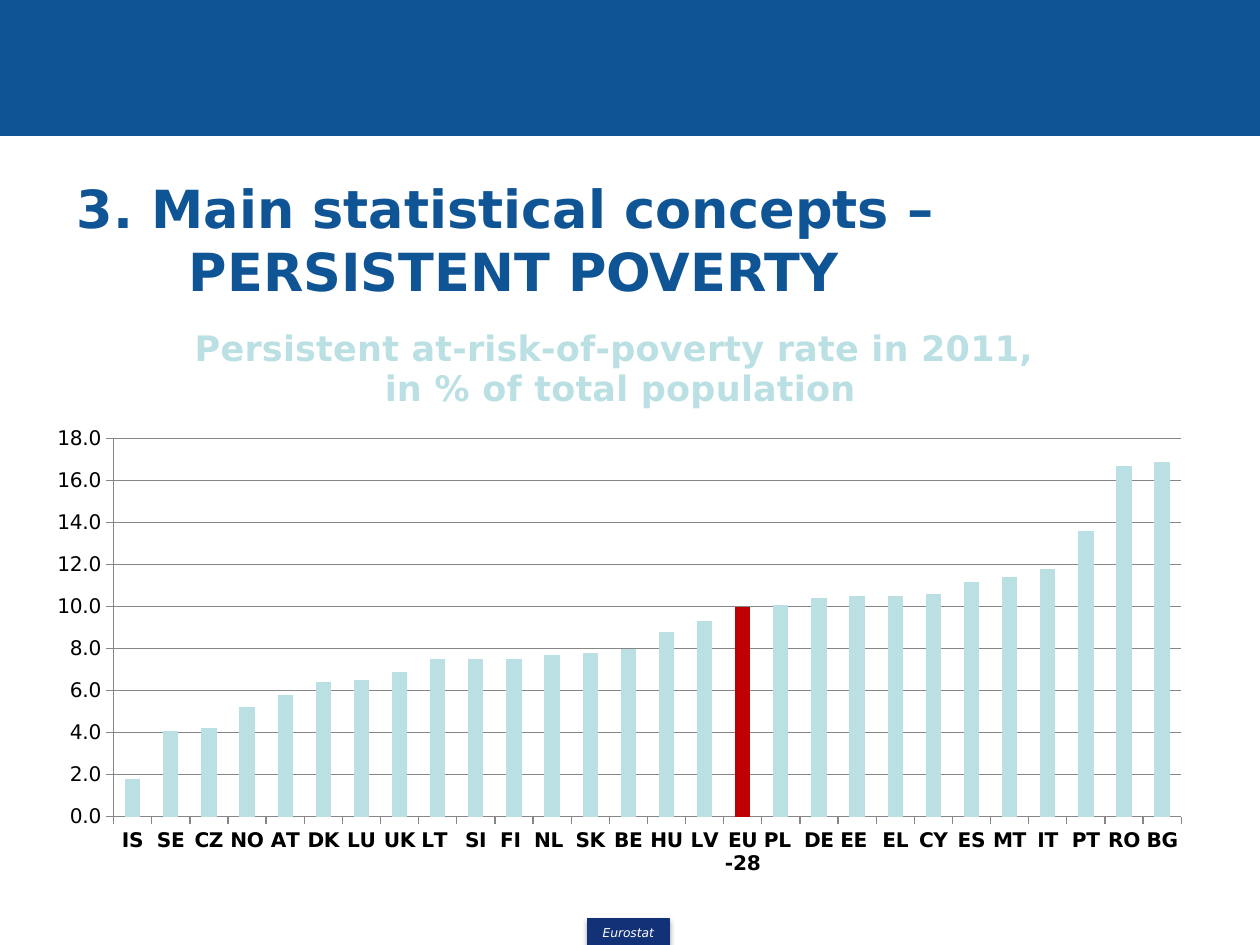
from lxml import etree
from pptx import Presentation
from pptx.chart.data import CategoryChartData
from pptx.dml.color import RGBColor
from pptx.enum.chart import XL_CHART_TYPE, XL_TICK_MARK
from pptx.enum.shapes import MSO_SHAPE
from pptx.enum.text import MSO_ANCHOR, PP_ALIGN
from pptx.oxml import parse_xml
from pptx.oxml.ns import nsdecls, qn
from pptx.util import Cm, Pt

BLUE = RGBColor(0x0F, 0x54, 0x94)
NAVY = RGBColor(0x13, 0x31, 0x76)
PALE = RGBColor(0xBB, 0xE0, 0xE3)
RED = RGBColor(0xC0, 0x00, 0x00)
GREY = RGBColor(0x86, 0x86, 0x86)
BLACK = RGBColor(0x00, 0x00, 0x00)
WHITE = RGBColor(0xFF, 0xFF, 0xFF)
FACE = "DejaVu Sans"


def add_block(left, top, width, height, color):
    block = slide.shapes.add_shape(
        MSO_SHAPE.RECTANGLE, Cm(left), Cm(top), Cm(width), Cm(height))
    block.fill.solid()
    block.fill.fore_color.rgb = color
    block.line.color.rgb = color
    block.line.width = Pt(0.75)
    block.shadow.inherit = False
    return block


def set_font(font, size, color, bold=False, italic=False):
    font.name = FACE
    font.size = Pt(size)
    font.color.rgb = color
    font.bold = bold
    font.italic = italic


deck = Presentation()
deck.slide_width, deck.slide_height = Cm(25.4), Cm(19.05)
slide = deck.slides.add_slide(deck.slide_layouts[6])

# Header band
add_block(0, 0, 25.4, 2.74, BLUE)

# Footer label with a soft shadow
label = add_block(11.84, 18.52, 1.65, 0.56, NAVY)
effects = label._element.spPr.find(qn("a:effectLst"))
effects.append(parse_xml(
    f'<a:outerShdw {nsdecls("a")} blurRad="40000" dist="23000" dir="5400000" rotWithShape="0">'
    '<a:srgbClr val="000000"><a:alpha val="35000"/></a:srgbClr></a:outerShdw>'))
frame = label.text_frame
frame.margin_left = frame.margin_right = 0
frame.margin_top = frame.margin_bottom = 0
frame.vertical_anchor = MSO_ANCHOR.MIDDLE
frame.text = "Eurostat"
frame.paragraphs[0].alignment = PP_ALIGN.CENTER
set_font(frame.paragraphs[0].runs[0].font, 7, WHITE, italic=True)

# Slide title with a hanging indent
box = slide.shapes.add_textbox(Cm(1.3), Cm(3.53), Cm(24.61), Cm(2.59))
frame = box.text_frame
frame.word_wrap = True
frame.vertical_anchor = MSO_ANCHOR.MIDDLE
head = frame.paragraphs[0]
head.text = "3. Main statistical concepts – \v\tPERSISTENT POVERTY"
props = head._p.get_or_add_pPr()
props.set("marL", str(Cm(0.99)))
props.set("indent", str(-Cm(0.99)))
for run in head.runs:
    set_font(run.font, 30, BLUE, bold=True)

# Poverty rates by country
rates = {
    "IS": 1.8, "SE": 4.1, "CZ": 4.2, "NO": 5.2, "AT": 5.8, "DK": 6.4, "LU": 6.5,
    "UK ": 6.9, "LT ": 7.5, "SI": 7.5, "FI ": 7.5, "NL ": 7.7, "SK": 7.8, "BE": 8,
    "HU": 8.8, "LV": 9.3, "EU-28 ": 10, "PL ": 10.1, "DE ": 10.4, "EE ": 10.5,
    "EL": 10.5, "CY": 10.6, "ES": 11.2, "MT": 11.4, "IT": 11.8, "PT": 13.6,
    "RO": 16.7, "BG": 16.9,
}
data = CategoryChartData(number_format="0.0")
data.categories = list(rates)
data.add_series("Series 1", list(rates.values()))
chart = slide.shapes.add_chart(
    XL_CHART_TYPE.COLUMN_CLUSTERED, Cm(0.71), Cm(6.12), Cm(23.6), Cm(11.81), data).chart
set_font(chart.font, 10, BLACK)
chart.has_legend = False

# Chart title
chart.has_title = True
frame = chart.chart_title.text_frame
frame.text = "Persistent at-risk-of-poverty rate in 2011, \nin % of total population"
for line in frame.paragraphs:
    set_font(line.runs[0].font, 20, PALE, bold=True)
chart.chart_title.include_in_layout = False

# Columns, with the EU average picked out
plot = chart.plots[0]
plot.gap_width = 150
plot.vary_by_categories = False
bars = plot.series[0]
bars.invert_if_negative = False
mean = bars.points[list(rates).index("EU-28 ")]
for part, color in ((bars, PALE), (mean, RED)):
    part.format.fill.solid()
    part.format.fill.fore_color.rgb = color

# Axes
for axis, bold in ((chart.category_axis, True), (chart.value_axis, False)):
    axis.major_tick_mark = XL_TICK_MARK.OUTSIDE
    axis.minor_tick_mark = XL_TICK_MARK.NONE
    axis.format.line.color.rgb = GREY
    axis.format.line.width = Pt(0.75)
    set_font(axis.tick_labels.font, 11.5, BLACK, bold=bold)
scale = chart.value_axis
scale.minimum_scale, scale.maximum_scale, scale.major_unit = 0, 18, 2
scale.tick_labels.number_format = "0.0"
scale.tick_labels.number_format_is_linked = False
scale.has_major_gridlines = True
scale.major_gridlines.format.line.color.rgb = GREY
scale.major_gridlines.format.line.width = Pt(0.75)

# Inner plot area, as shares of the chart
area = chart._chartSpace.chart.plotArea
for old in area.findall(qn("c:layout")):
    area.remove(old)
layout = parse_xml(f'<c:layout {nsdecls("c")}><c:manualLayout/></c:layout>')
for tag, value in (("layoutTarget", "inner"), ("xMode", "edge"), ("yMode", "edge"),
                   ("x", 0.067), ("y", 0.231), ("w", 0.912), ("h", 0.645)):
    etree.SubElement(layout[0], qn(f"c:{tag}")).set("val", str(value))
area.insert(0, layout)

deck.save("out.pptx")
